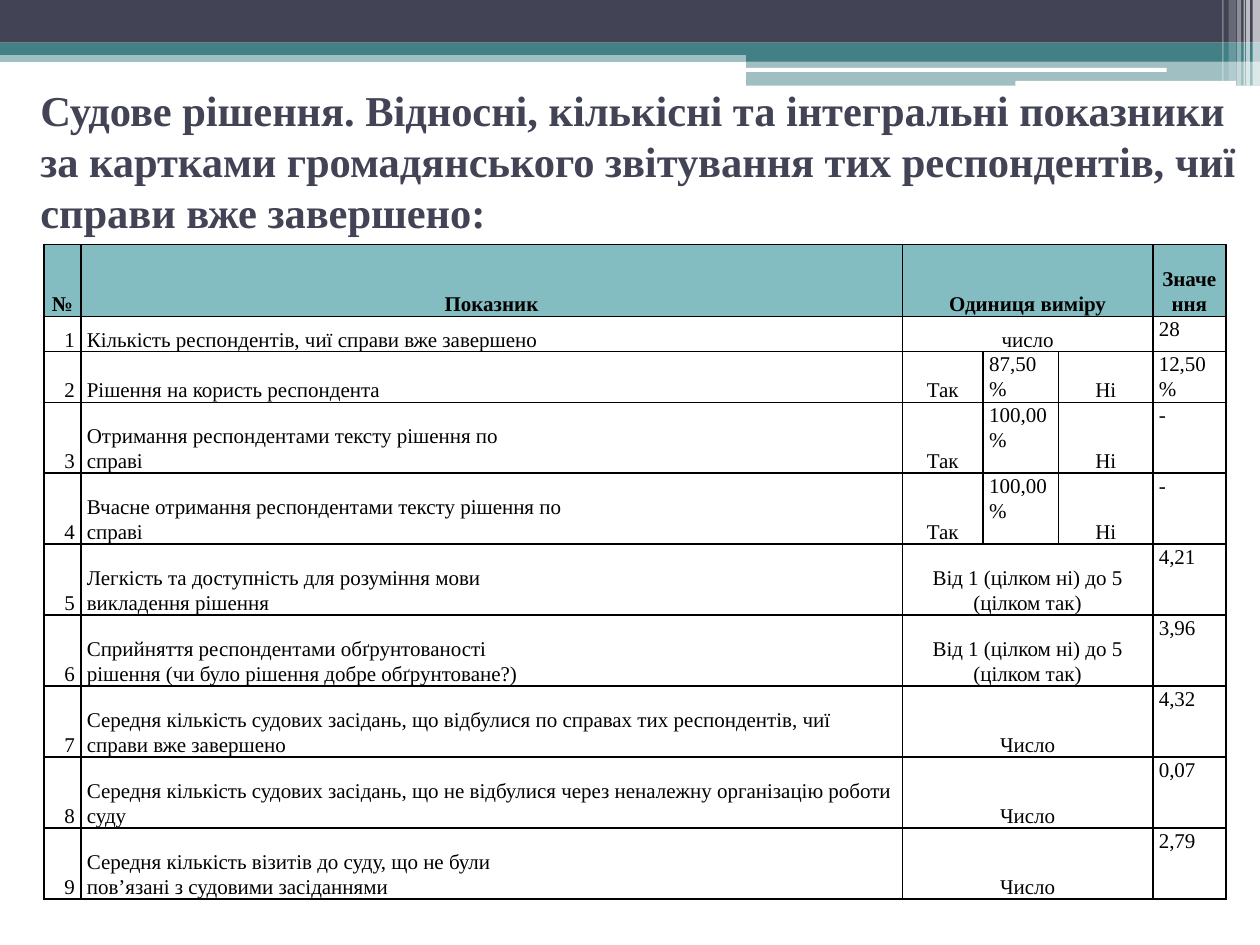
from lxml import etree
from pptx import Presentation
from pptx.dml.color import RGBColor
from pptx.enum import shapes, text
from pptx.oxml import ns
from pptx.util import Cm, Pt

HUES = {"navy": "424456", "teal": "438086", "white": "FFFFFF",
        "head": "83BCC1", "black": "000000"}
FACE = "Times New Roman"
LEFT, MID, RIGHT = text.PP_ALIGN.LEFT, text.PP_ALIGN.CENTER, text.PP_ALIGN.RIGHT
RECT, ROUND = shapes.MSO_SHAPE.RECTANGLE, shapes.MSO_SHAPE.ROUNDED_RECTANGLE


def paint(fill, hue, alpha=100):
    """Fill with a solid colour of the given opacity in percent."""
    fill.solid()
    fill.fore_color.rgb = RGBColor.from_string(HUES[hue])
    if alpha < 100:
        clr = fill._xPr.find(".//" + ns.qn("a:srgbClr"))
        etree.SubElement(clr, ns.qn("a:alpha"), val=str(alpha * 1000))


def edge(cell):
    """Draw a thin black line on all four sides of a cell."""
    props = cell._tc.get_or_add_tcPr()
    for spot, side in enumerate(("lnL", "lnR", "lnT", "lnB")):
        line = etree.Element(ns.qn("a:" + side), w=str(Pt(1)))
        solid = etree.SubElement(line, ns.qn("a:solidFill"))
        etree.SubElement(solid, ns.qn("a:srgbClr"), val=HUES["black"])
        props.insert(spot, line)


deck = Presentation()
deck.slide_width, deck.slide_height = Cm(25.4), Cm(19.05)
slide = deck.slides.add_slide(deck.slide_layouts[5])

# Header band: left, top, width, height, shape, colour, opacity
bars = [
    (0, 1.02, 25.4, 0.23, RECT, "teal", 50),
    (0, 0, 25.4, 0.86, RECT, "navy", 100),
    (0, 0.86, 25.4, 0.25, RECT, "teal", 100),
    (15.04, 0.99, 10.36, 0.25, RECT, "teal", 100),
    (15.04, 1.22, 10.36, 0.51, RECT, "teal", 50),
    (15.01, 1.37, 8.51, 0.08, ROUND, "white", 100),
    (20.47, 1.63, 4.45, 0.1, ROUND, "white", 100),
]
strips = [(25.25, 0.15, 1.73, 65), (25.12, 0.08, 1.73, 65),
          (25.07, 0.03, 1.73, 60), (24.94, 0.08, 1.73, 40),
          (24.77, 0.15, 1.63, 20), (24.64, 0.03, 1.63, 30)]
bars += [(x, 0, w, h, RECT, "white", alpha) for x, w, h, alpha in strips]
for x, y, w, h, kind, hue, alpha in bars:
    bar = slide.shapes.add_shape(kind, Cm(x), Cm(y), Cm(w), Cm(h))
    bar.shadow.inherit = False
    bar.line.fill.background()
    paint(bar.fill, hue, alpha)

# Title
title = slide.shapes.title
place = {"left": 0.56, "top": 1.75, "width": 24.84, "height": 2.97}
for name, size in place.items():
    setattr(title, name, Cm(size))
frame = title.text_frame
frame.text = ("Судове рішення. Відносні, кількісні та інтегральні показники "
              "за картками громадянського звітування тих респондентів, "
              "чиї справи вже завершено:")
frame.auto_size = text.MSO_AUTO_SIZE.NONE
frame.word_wrap = True
frame.vertical_anchor = text.MSO_ANCHOR.MIDDLE
para = frame.paragraphs[0]
para.alignment, para.line_spacing = LEFT, 1.0
for name, value in {"name": FACE, "size": Pt(24.3), "bold": True}.items():
    setattr(para.font, name, value)
para.font.color.rgb = RGBColor.from_string(HUES["navy"])

# Table: indicator, unit (or share of "yes"), value
SCALE = "Від 1 (цілком ні) до 5 (цілком так)"
facts = [
    ("Кількість респондентів, чиї справи вже завершено", "число", "28"),
    ("Рішення на користь респондента", "87,50%", "12,50%"),
    ("Отримання респондентами тексту рішення по\vсправі", "100,00%", "-"),
    ("Вчасне отримання респондентами тексту рішення по\vсправі", "100,00%", "-"),
    ("Легкість та доступність для розуміння мови\vвикладення рішення", SCALE, "4,21"),
    ("Сприйняття респондентами обґрунтованості\v"
     "рішення (чи було рішення добре обґрунтоване?)", SCALE, "3,96"),
    ("Середня кількість судових засідань, що відбулися по справах тих "
     "респондентів, чиї справи вже завершено", "Число", "4,32"),
    ("Середня кількість судових засідань, що не відбулися через неналежну "
     "організацію роботи\vсуду", "Число", "0,07"),
    ("Середня кількість візитів до суду, що не були\v"
     "пов’язані з судовими засіданнями", "Число", "2,79"),
]
rows = [["№", "Показник", "Одиниця виміру", None, None, "Значення"]]
for num, (label, unit, value) in enumerate(facts, 1):
    split = unit.endswith("%")
    units = ["Так", unit, "Ні"] if split else [unit, None, None]
    rows.append([str(num), label, *units, value])

wide = [0.74, 16.56, 1.63, 1.52, 1.9, 1.47]
tall = [1.45, 0.71, 1.02] + [1.43] * 7
grid = slide.shapes.add_table(len(rows), len(wide), Cm(0.89), Cm(4.93),
                              Cm(sum(wide)), Cm(sum(tall))).table
for col, size in zip(grid.columns, wide):
    col.width = Cm(size)
for row, size in zip(grid.rows, tall):
    row.height = Cm(size)

sides = [RIGHT, LEFT, MID, LEFT, MID, LEFT]
pads = {"margin_left": 0.12, "margin_right": 0.12,
        "margin_top": 0, "margin_bottom": 0}
for r, words in enumerate(rows):
    head = r == 0
    if words[3] is None:
        grid.cell(r, 2).merge(grid.cell(r, 4))
    for c, word in enumerate(words):
        cell = grid.cell(r, c)
        if head:
            paint(cell.fill, "head")
        else:
            cell.fill.background()
        edge(cell)
        for name, size in pads.items():
            setattr(cell, name, Cm(size))
        if word is None:
            continue
        high = not head and c in (3, 5)
        cell.vertical_anchor = text.MSO_ANCHOR.TOP if high else text.MSO_ANCHOR.BOTTOM
        para = cell.text_frame.paragraphs[0]
        para.text = word
        para.alignment = MID if head else sides[c]
        para.line_spacing = 1.07
        if high:
            para.space_after = Pt(8)
        for name, value in {"name": FACE, "size": Pt(12), "bold": head}.items():
            setattr(para.font, name, value)
        para.font.color.rgb = RGBColor.from_string(HUES["black"])

deck.save("out.pptx")
